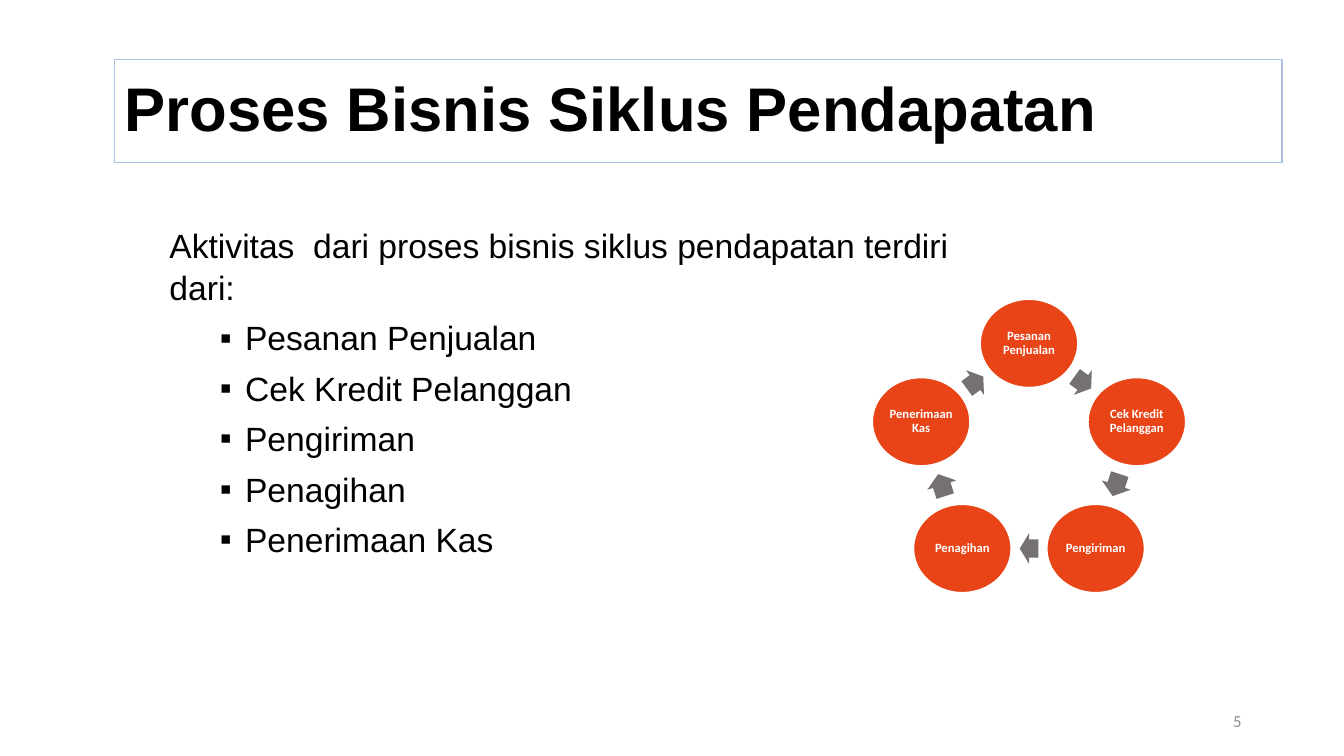
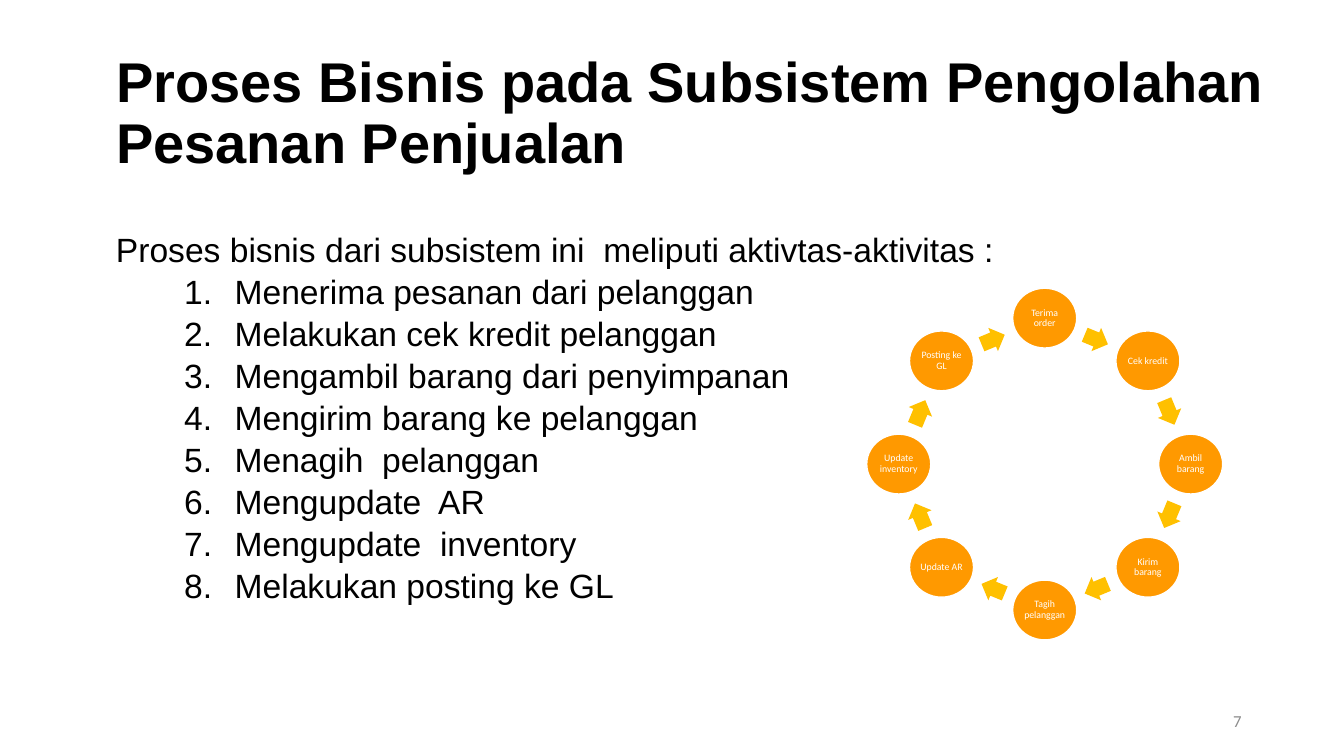
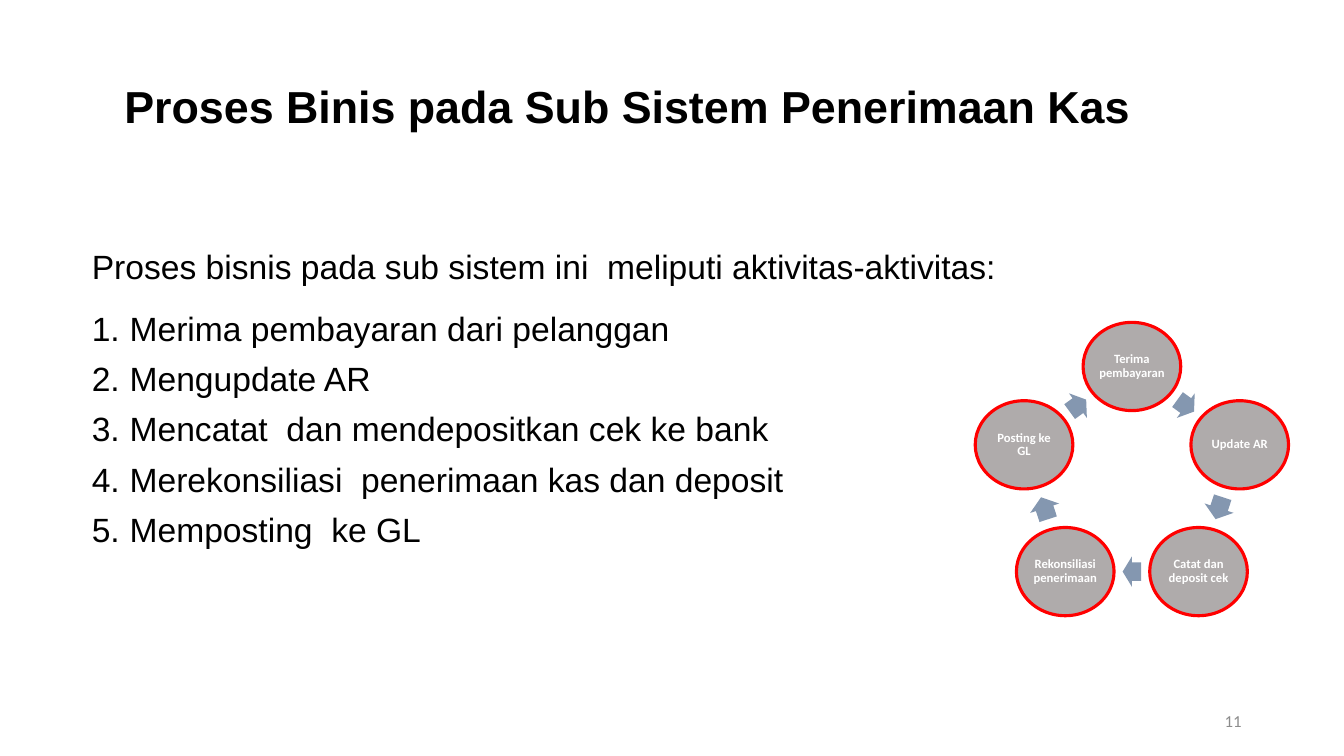
import math

import pptx
import pptx.dml.color
import pptx.enum.shapes
import pptx.enum.text
import pptx.oxml
import pptx.oxml.ns
import pptx.util

PX = 9525  # EMU per pixel, 96 pixels to the inch
SLIDE_SIZE = (1280, 720)
HEADING_FONT, DIAGRAM_FONT = "Arial", "Calibri"
BLACK, WHITE, GREY = "000000", "FFFFFF", "8C8C8C"
NUMBER_BOX = (904, 667, 288, 38)
ARROW_SHARE = 0.52  # part of the gap between two nodes that an arrow fills

ALIGN = pptx.enum.text.PP_ALIGN
MIDDLE = pptx.enum.text.MSO_ANCHOR.MIDDLE
SHAPE = pptx.enum.shapes.MSO_SHAPE
SQUARE_BULLET = '<a:buChar {} char="▪"/>'
NUMBERED = '<a:buAutoNum {} type="arabicPeriod"/>'

# Content
SLIDES = [
    {
        "number": "5",
        "title": {"text": "Proses Bisnis Siklus Pendapatan", "box": (109, 57, 1112, 98),
                  "size": 44, "align": ALIGN.LEFT, "line": "ABC0E4"},
        "body": {
            "box": (152, 208, 798, 383), "align": ALIGN.LEFT,
            "spacing": pptx.util.Pt(30), "before": 6, "intro_after": 0,
            "bullet": SQUARE_BULLET, "margin": 72, "hanging": 24,
            "intro": "Aktivitas  dari proses bisnis siklus pendapatan terdiri dari:",
            "items": ["Pesanan Penjualan", "Cek Kredit Pelanggan", "Pengiriman",
                      "Penagihan", "Penerimaan Kas"],
        },
        "cycle": {
            "center": (980, 435), "radius": 108, "node": (93, 84), "arrow_height": 29,
            "fill": "E94417", "line": WHITE, "line_width": 1, "arrow": "767171",
            "size": 9, "bold": True,
            "labels": ["Pesanan Penjualan", "Cek Kredit Pelanggan", "Pengiriman",
                       "Penagihan", "Penerimaan Kas"],
        },
    },
    {
        "number": "7",
        "title": {"text": "Proses Bisnis pada Subsistem Pengolahan Pesanan Penjualan",
                  "box": (101, 33, 1114, 153), "size": 40, "align": ALIGN.LEFT, "line": None},
        "body": {
            "box": (101, 212, 1037, 421), "align": ALIGN.LEFT,
            "spacing": pptx.util.Pt(30), "before": 0, "intro_after": 0,
            "bullet": NUMBERED, "margin": 113, "hanging": 48,
            "intro": "Proses bisnis dari subsistem ini  meliputi aktivtas-aktivitas :",
            "items": ["Menerima pesanan dari pelanggan", "Melakukan cek kredit pelanggan",
                      "Mengambil barang dari penyimpanan", "Mengirim barang ke pelanggan",
                      "Menagih  pelanggan", "Mengupdate  AR", "Mengupdate  inventory",
                      "Melakukan posting ke GL"],
        },
        "cycle": {
            "center": (995, 442), "radius": 139, "node": (61, 57), "arrow_height": 24,
            "fill": "FF9900", "line": WHITE, "line_width": 1, "arrow": "FFC000",
            "size": 7, "bold": False,
            "labels": ["Terima order", "Cek kredit", "Ambil barang", "Kirim barang",
                       "Tagih pelanggan", "Update AR", "Update inventory", "Posting ke GL"],
        },
    },
    {
        "number": "11",
        "title": {"text": "Proses Binis pada Sub Sistem Penerimaan Kas",
                  "box": (16, 47, 1164, 114), "size": 32, "align": ALIGN.CENTER, "line": None},
        "body": {
            "box": (78, 228, 921, 383), "align": ALIGN.JUSTIFY,
            "spacing": 1.04, "before": 6, "intro_after": 8,
            "bullet": NUMBERED, "margin": 36, "hanging": 36,
            "intro": "Proses bisnis pada sub sistem ini  meliputi aktivitas-aktivitas:",
            "items": ["Merima pembayaran dari pelanggan", "Mengupdate AR",
                      "Mencatat  dan mendepositkan cek ke bank",
                      "Merekonsiliasi  penerimaan kas dan deposit", "Memposting  ke GL"],
        },
        "cycle": {
            "center": (1078, 457), "radius": 108, "node": (93, 84), "arrow_height": 29,
            "fill": "AFABAB", "line": "FF0000", "line_width": 2.25, "arrow": "8497B0",
            "size": 9, "bold": True,
            "labels": ["Terima pembayaran", "Update AR", "Catat dan deposit cek",
                       "Rekonsiliasi penerimaan", "Posting ke GL"],
        },
    },
]


def emu(*lengths):
    return [round(length * PX) for length in lengths]


def rgb(value):
    return pptx.dml.color.RGBColor.from_string(value)


def paint(shape, fill, line=None, width=0.75):
    shape.fill.solid()
    shape.fill.fore_color.rgb = rgb(fill)
    if line:
        shape.line.color.rgb = rgb(line)
        shape.line.width = pptx.util.Pt(width)
    else:
        shape.line.fill.background()


def style(para, font, size, color, align, bold=False):
    para.font.name, para.font.size, para.font.bold = font, pptx.util.Pt(size), bold
    para.font.color.rgb = rgb(color)
    para.alignment = align


def add_bullet(para, bullet, margin, hanging):
    properties = para._p.get_or_add_pPr()
    properties.set("marL", str(margin * PX))
    properties.set("indent", str(-hanging * PX))
    namespace = pptx.oxml.ns.nsdecls("a")
    for xml in ('<a:buFont {} typeface="Arial"/>', bullet):
        element = pptx.oxml.parse_xml(xml.format(namespace))
        properties.insert_element_before(element, "a:tabLst", "a:defRPr", "a:extLst")


def set_title(page, title):
    box = page.shapes.title
    box.left, box.top, box.width, box.height = emu(*title["box"])
    frame = box.text_frame
    frame.text = title["text"]
    frame.auto_size = pptx.enum.text.MSO_AUTO_SIZE.NONE
    frame.word_wrap = True
    frame.vertical_anchor = MIDDLE
    para = frame.paragraphs[0]
    para.line_spacing = 0.9
    style(para, HEADING_FONT, title["size"], BLACK, title["align"], True)
    if title["line"]:
        paint(box, WHITE, title["line"])


def add_body(page, body):
    frame = page.shapes.add_textbox(*emu(*body["box"])).text_frame
    frame.word_wrap = True
    frame.text = "\n".join([body["intro"], *body["items"]])
    for index, para in enumerate(frame.paragraphs):
        style(para, HEADING_FONT, 24, BLACK, body["align"])
        para.line_spacing = body["spacing"]
        para.space_before = pptx.util.Pt(body["before"])
        para.space_after = pptx.util.Pt(0 if index else body["intro_after"])
        if index:
            add_bullet(para, body["bullet"], body["margin"], body["hanging"])


def add_centered(page, kind, x, y, width, height):
    shape = page.shapes.add_shape(kind, *emu(x - width / 2, y - height / 2, width, height))
    shape.shadow.inherit = False
    return shape


def add_cycle(page, cycle):
    center_x, center_y = cycle["center"]
    radius = cycle["radius"]
    width, height = cycle["node"]
    step = 2 * math.pi / len(cycle["labels"])
    chord = 2 * radius * math.sin(step / 2)
    for index, label in enumerate(cycle["labels"]):
        # Node, clockwise from the top
        angle = index * step
        node = add_centered(page, SHAPE.OVAL, center_x + radius * math.sin(angle),
                            center_y - radius * math.cos(angle), width, height)
        paint(node, cycle["fill"], cycle["line"], cycle["line_width"])
        frame = node.text_frame
        frame.word_wrap = True
        frame.vertical_anchor = MIDDLE
        frame.margin_left = frame.margin_right = frame.margin_top = frame.margin_bottom = PX
        frame.text = label
        para = frame.paragraphs[0]
        para.line_spacing = 0.9
        style(para, DIAGRAM_FONT, cycle["size"], WHITE, ALIGN.CENTER, cycle["bold"])

        # Arrow halfway to the next node, sized to the gap between the ellipses
        turn = angle + step / 2
        middle = radius * math.cos(step / 2)
        inside = 2 / math.hypot(math.cos(turn) / (width / 2), math.sin(turn) / (height / 2))
        arrow = add_centered(page, SHAPE.RIGHT_ARROW, center_x + middle * math.sin(turn),
                             center_y - middle * math.cos(turn),
                             ARROW_SHARE * (chord - inside), cycle["arrow_height"])
        arrow.adjustments[0], arrow.adjustments[1] = 0.6, 0.5
        arrow.rotation = math.degrees(turn)
        paint(arrow, cycle["arrow"])


def add_number(page, number):
    frame = page.shapes.add_textbox(*emu(*NUMBER_BOX)).text_frame
    frame.word_wrap = True
    frame.vertical_anchor = MIDDLE
    frame.text = number
    style(frame.paragraphs[0], DIAGRAM_FONT, 12, GREY, ALIGN.RIGHT)


def main():
    deck = pptx.Presentation()
    deck.slide_width, deck.slide_height = emu(*SLIDE_SIZE)
    for content in SLIDES:
        page = deck.slides.add_slide(deck.slide_layouts[5])
        set_title(page, content["title"])
        add_body(page, content["body"])
        add_cycle(page, content["cycle"])
        add_number(page, content["number"])
    deck.save("out.pptx")


if __name__ == "__main__":
    main()
